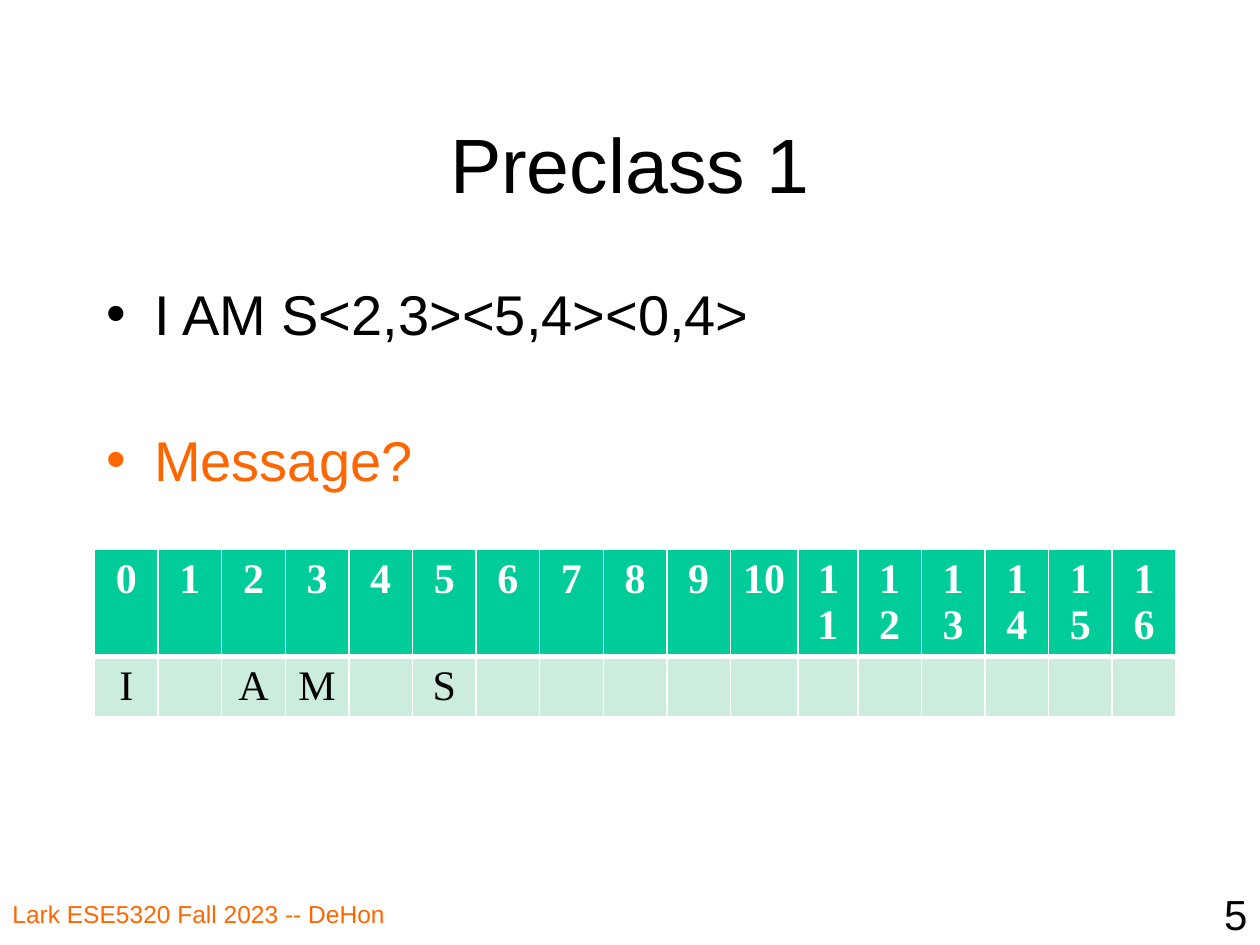
from dataclasses import dataclass

from lxml import etree
from pptx import Presentation
from pptx.dml.color import RGBColor
from pptx.enum.text import MSO_ANCHOR, PP_ALIGN
from pptx.oxml.ns import qn
from pptx.util import Pt

LEFT, CENTER, RIGHT = PP_ALIGN.LEFT, PP_ALIGN.CENTER, PP_ALIGN.RIGHT
MIDDLE = MSO_ANCHOR.MIDDLE
COLORS = {
    "black": "000000",
    "white": "FFFFFF",
    "orange": "FF6600",
    "green": "00CC99",
    "mint": "CCECDE",
}
SANS, SERIF = "Arial", "Times New Roman"
TITLE_ONLY = 5
COLUMN_WIDTHS = [36.36] * 10 + [38.6, 34.2] + [36.36] * 5
ROW_HEIGHT = 29.25
LETTERS = {0: "I", 2: "A", 3: "M", 5: "S"}


@dataclass
class Line:
    text: str
    size: float
    color: str
    align: PP_ALIGN = LEFT
    font: str = SANS
    bold: bool = False
    space_before: float = 0
    bullet: bool = False


@dataclass
class TextBox:
    left: float
    top: float
    width: float
    height: float
    lines: list[Line]


@dataclass
class RowStyle:
    fill: str
    color: str
    bold: bool
    bottom_border: float
    bottom_margin: float


TITLE = Line("Preclass 1", 44, "black", CENTER)
TEXT_BOXES = [
    TextBox(54, 156, 612, 78, [
        Line("I AM S<2,3><5,4><0,4>", 32, "black", space_before=4, bullet=True),
        Line("Message?", 32, "orange", space_before=45, bullet=True),
    ]),
    TextBox(0, 510, 276, 30, [Line("Lark ESE5320 Fall 2023 -- DeHon", 14, "orange")]),
    TextBox(570, 504, 150, 36, [Line("5", 24, "black", RIGHT)]),
]
HEADER_STYLE = RowStyle("green", "white", True, 3, 0)
BODY_STYLE = RowStyle("mint", "black", False, 1, 2)


def rgb(name: str) -> RGBColor:
    return RGBColor.from_string(COLORS[name])


def write_line(paragraph, line: Line) -> None:
    paragraph.text = line.text
    paragraph.alignment = line.align
    paragraph.space_before = Pt(line.space_before)
    for run in paragraph.runs:
        run.font.name = line.font
        run.font.size = Pt(line.size)
        run.font.bold = line.bold
        run.font.color.rgb = rgb(line.color)
    if line.bullet:
        properties = paragraph._p.get_or_add_pPr()
        properties.set("marL", str(Pt(27)))
        properties.set("indent", str(Pt(-27)))
        etree.SubElement(properties, qn("a:buFont"), typeface=line.font)
        etree.SubElement(properties, qn("a:buChar"), char="•")


def add_text_box(slide, box: TextBox) -> None:
    shape = slide.shapes.add_textbox(Pt(box.left), Pt(box.top), Pt(box.width), Pt(box.height))
    text_frame = shape.text_frame
    text_frame.word_wrap = True
    for index, line in enumerate(box.lines):
        paragraph = text_frame.add_paragraph() if index else text_frame.paragraphs[0]
        write_line(paragraph, line)


def add_borders(cell, bottom: float) -> None:
    properties = cell._tc.get_or_add_tcPr()
    for tag, width in (("lnL", 1), ("lnR", 1), ("lnT", 1), ("lnB", bottom)):
        border = etree.SubElement(properties, qn(f"a:{tag}"), w=str(Pt(width)))
        fill = etree.SubElement(border, qn("a:solidFill"))
        etree.SubElement(fill, qn("a:srgbClr"), val=COLORS["white"])


def fill_cell(cell, text: str, style: RowStyle) -> None:
    add_borders(cell, style.bottom_border)
    cell.margin_bottom = Pt(style.bottom_margin)
    cell.fill.solid()
    cell.fill.fore_color.rgb = rgb(style.fill)
    if text:
        line = Line(text, 24, style.color, CENTER, SERIF, style.bold)
        write_line(cell.text_frame.paragraphs[0], line)


def add_message_table(slide) -> None:
    columns = len(COLUMN_WIDTHS)
    frame = slide.shapes.add_table(
        2, columns, Pt(54), Pt(314), Pt(sum(COLUMN_WIDTHS)), Pt(2 * ROW_HEIGHT))
    table = frame.table
    for row in table.rows:
        row.height = Pt(ROW_HEIGHT)
    for index, width in enumerate(COLUMN_WIDTHS):
        table.columns[index].width = Pt(width)
        fill_cell(table.cell(0, index), str(index), HEADER_STYLE)
        fill_cell(table.cell(1, index), LETTERS.get(index, ""), BODY_STYLE)


def main() -> None:
    presentation = Presentation()
    presentation.slide_width, presentation.slide_height = Pt(720), Pt(540)
    slide = presentation.slides.add_slide(presentation.slide_layouts[TITLE_ONLY])
    title = slide.shapes.title
    title.left, title.top, title.width, title.height = Pt(54), Pt(48), Pt(612), Pt(90)
    title.text_frame.vertical_anchor = MIDDLE
    write_line(title.text_frame.paragraphs[0], TITLE)
    for box in TEXT_BOXES:
        add_text_box(slide, box)
    add_message_table(slide)
    presentation.save("out.pptx")


if __name__ == "__main__":
    main()
